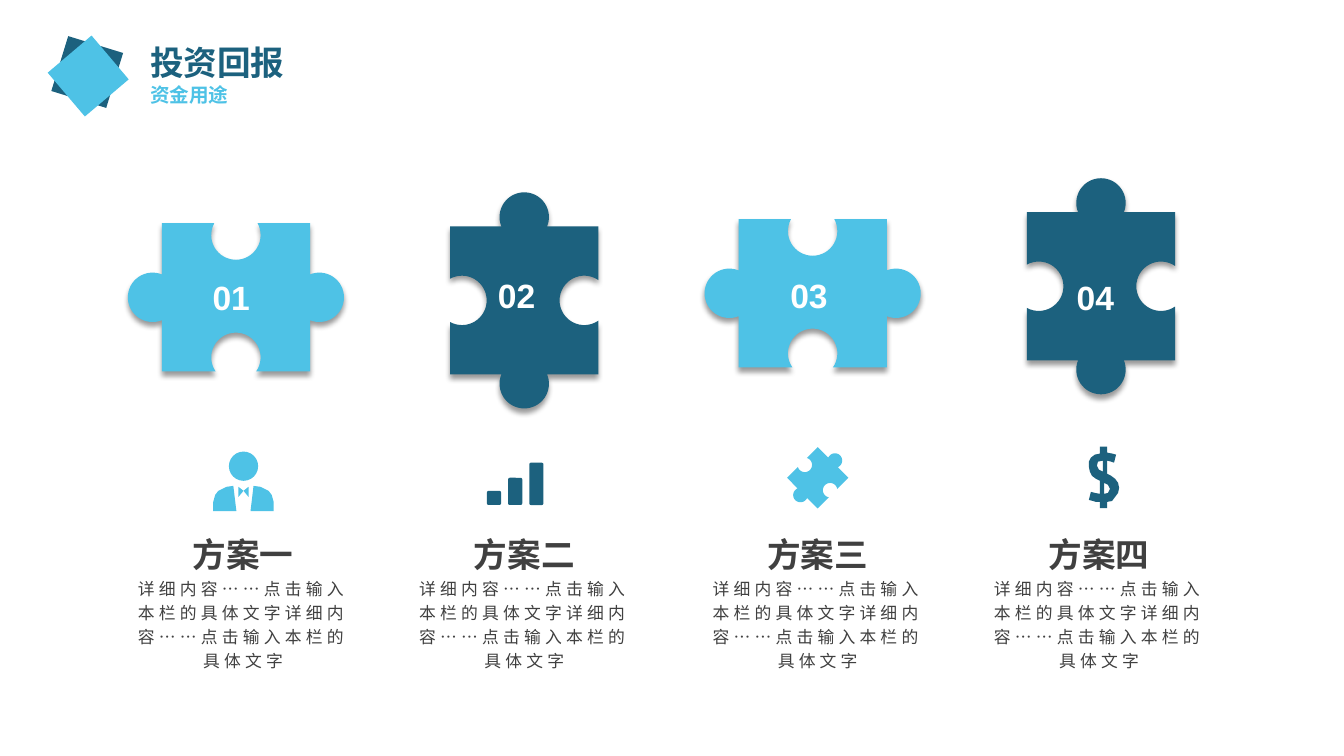
import math

import pptx
import pptx.dml.color
import pptx.enum.shapes
import pptx.enum.text
import pptx.oxml
import pptx.oxml.ns
import pptx.util
from pptx.util import Inches

COLORS = {"dark": "1C617E", "light": "4EC2E6", "text": "404040", "white": "FFFFFF"}
SHAPE = pptx.enum.shapes.MSO_SHAPE
DETAIL = "详细内容……点击输入本栏的具体文字详细内容……点击输入本栏的具体文字"

DOLLAR_BODY = [
    (10.91, 4.98), (10.87, 4.98), (10.84, 4.97), (10.8, 4.96), (10.82, 4.88), (10.86, 4.89),
    (10.91, 4.9), (10.91, 4.77), (10.87, 4.75), (10.83, 4.72), (10.81, 4.68), (10.8, 4.63),
    (10.8, 4.58), (10.82, 4.54), (10.86, 4.51), (10.91, 4.5), (10.91, 4.43), (10.98, 4.43),
    (10.98, 4.49), (11.03, 4.5), (11.07, 4.51), (11.05, 4.59), (11.02, 4.58), (10.98, 4.57),
    (10.98, 4.7), (11.02, 4.72), (11.06, 4.75), (11.09, 4.79), (11.1, 4.84), (11.09, 4.89),
    (11.06, 4.93), (11.03, 4.97), (10.98, 4.98), (10.98, 5.04), (10.91, 5.04)]
DOLLAR_UPPER_GAP = [(10.88, 4.62), (10.9, 4.66), (10.94, 4.68), (10.94, 4.57), (10.89, 4.58)]
DOLLAR_LOWER_GAP = [(11.01, 4.85), (10.99, 4.81), (10.95, 4.79), (10.95, 4.9), (10.99, 4.89)]


def rgb(color):
    """Return the named colour as an RGBColor."""
    return pptx.dml.color.RGBColor.from_string(COLORS[color])


def paint(shape, color):
    """Give a shape a plain fill without line or shadow."""
    shape.fill.solid()
    shape.fill.fore_color.rgb = rgb(color)
    shape.line.fill.background()
    shape.shadow.inherit = False
    return shape


def block(shapes, kind, left, top, width, height, color, rotation=0):
    """Add a filled preset shape."""
    preset = shapes.add_shape(kind, Inches(left), Inches(top), Inches(width), Inches(height))
    preset.rotation = rotation
    return paint(preset, color)


def outline(shapes, contours, color):
    """Add a filled freeform made of closed contours in inches."""
    contours = [[(Inches(x), Inches(y)) for x, y in contour] for contour in contours]
    builder = shapes.build_freeform(*contours[0][0])
    builder.add_line_segments(contours[0][1:], close=True)
    for contour in contours[1:]:
        builder.move_to(*contour[0])
        builder.add_line_segments(contour[1:], close=True)
    return paint(builder.convert_to_shape(), color)


def puzzle(shapes, x, y, color, half=0.735, turn=0):
    """Add a puzzle piece whose sockets face up and down before it is turned."""
    radius, steps = half / 3, 32
    points = []
    for side, depth in enumerate((0.16, -0.125, 0.19, -0.125)):
        inset = abs(depth) * half
        direction = math.copysign(1, depth)
        lean = math.asin(inset / radius)
        edge = [(-half, -half)]
        for step in range(steps + 1):
            angle = lean - math.pi - (math.pi + 2 * lean) * step / steps
            edge.append((radius * math.cos(angle),
                         -half + direction * (inset + radius * math.sin(angle))))
        heading = math.radians(turn + 90 * side)
        cos, sin = math.cos(heading), math.sin(heading)
        points += [(x + u * cos - v * sin, y + u * sin + v * cos) for u, v in edge]
    return outline(shapes, [points], color)


def drop_shadow(shape):
    """Give a shape a soft shadow straight below it."""
    effects = shape._element.spPr.find(pptx.oxml.ns.qn("a:effectLst"))
    effects.append(pptx.oxml.parse_xml(
        f'<a:outerShdw {pptx.oxml.ns.nsdecls("a")} blurRad="50800" dist="38100" dir="5400000" '
        'algn="t" rotWithShape="0"><a:srgbClr val="000000"><a:alpha val="40000"/>'
        '</a:srgbClr></a:outerShdw>'))


def write(shapes, lines, left, top, width, height, color="text", wrap=True,
          centered=False, line_spacing=None):
    """Add a text box from (text, size, bold, letter spacing) lines."""
    box = shapes.add_textbox(Inches(left), Inches(top), Inches(width), Inches(height))
    frame = box.text_frame
    frame.word_wrap = wrap
    frame.auto_size = pptx.enum.text.MSO_AUTO_SIZE.SHAPE_TO_FIT_TEXT
    for index, (text, size, bold, spacing) in enumerate(lines):
        paragraph = frame.add_paragraph() if index else frame.paragraphs[0]
        if centered:
            paragraph.alignment = pptx.enum.text.PP_ALIGN.CENTER
        if line_spacing:
            paragraph.line_spacing = line_spacing
        run = paragraph.add_run()
        run.text = text
        run.font.name = "Arial"
        run.font.size = pptx.util.Pt(size)
        run.font.bold = bold
        run.font.color.rgb = rgb(color)
        if spacing:
            run._r.get_or_add_rPr().set("spc", str(spacing * 100))


def person_icon(shapes, color):
    """Draw a person with a bow tie."""
    person = shapes.add_group_shape().shapes
    axis = 2.415
    block(person, SHAPE.OVAL, 2.27, 4.48, 0.29, 0.29, color)
    shoulder = [(0.1, 4.82), (0.17, 4.83), (0.25, 4.87), (0.28, 4.91), (0.3, 4.98),
                (0.3, 5.07), (0.07, 5.07)]
    bow = [(0, 4.87), (0.05, 4.83), (0.05, 4.93)]
    for mirror in (1, -1):
        for half in (shoulder, bow):
            outline(person, [[(axis + mirror * x, y) for x, y in half]], color)


def bars_icon(shapes, color):
    """Draw three rising bars."""
    bars = shapes.add_group_shape().shapes
    for index, height in enumerate((0.14, 0.27, 0.42)):
        bar = block(bars, SHAPE.ROUNDED_RECTANGLE, 4.83 + 0.21 * index, 5.01 - height,
                    0.14, height, color)
        bar.adjustments[0] = 0.12


def main():
    """Build the slide and save it."""
    deck = pptx.Presentation()
    deck.slide_width, deck.slide_height = Inches(13.33), Inches(7.5)
    shapes = deck.slides.add_slide(deck.slide_layouts[6]).shapes

    block(shapes, SHAPE.RECTANGLE, 0.58, 0.43, 0.57, 0.57, "dark", 17.1)
    block(shapes, SHAPE.RECTANGLE, 0.59, 0.47, 0.57, 0.57, "light", 49.7)
    write(shapes, [("投资回报", 24, True, 0)], 1.39, 0.37, 1.55, 0.5, "dark", wrap=False)
    write(shapes, [("资金用途", 14, True, 0)], 1.39, 0.77, 0.99, 0.34, "light", wrap=False)

    plans = [
        ("方案一", 2.95, 2.01, 2.7, 1.19),
        ("方案二", 2.98, 4.84, 2.68, 3.98),
        ("方案三", 2.91, 7.74, 2.68, 6.89),
        ("方案四", 2.84, 10.58, 2.7, 9.68),
    ]
    for index, (plan, piece_y, number_x, number_y, detail_x) in enumerate(plans):
        upright = index % 2 == 1
        piece = puzzle(shapes, 2.34 + 2.86 * index, piece_y,
                       "dark" if upright else "light", turn=-90 if upright else 0)
        drop_shadow(piece)
        write(shapes, [(f"{index + 1:02}", 24, True, 0)], number_x, number_y, 0.75, 0.5, "white")
        write(shapes, [(plan, 24, True, 0), (DETAIL, 12, False, 3)], detail_x, 5.17, 2.44, 1.56,
              centered=True, line_spacing=1.2)

    person_icon(shapes, "light")
    bars_icon(shapes, "dark")
    puzzle(shapes, 8.11, 4.74, "light", half=0.215, turn=-45)
    outline(shapes, [DOLLAR_BODY, DOLLAR_UPPER_GAP, DOLLAR_LOWER_GAP], "dark")

    deck.save("out.pptx")


if __name__ == "__main__":
    main()
